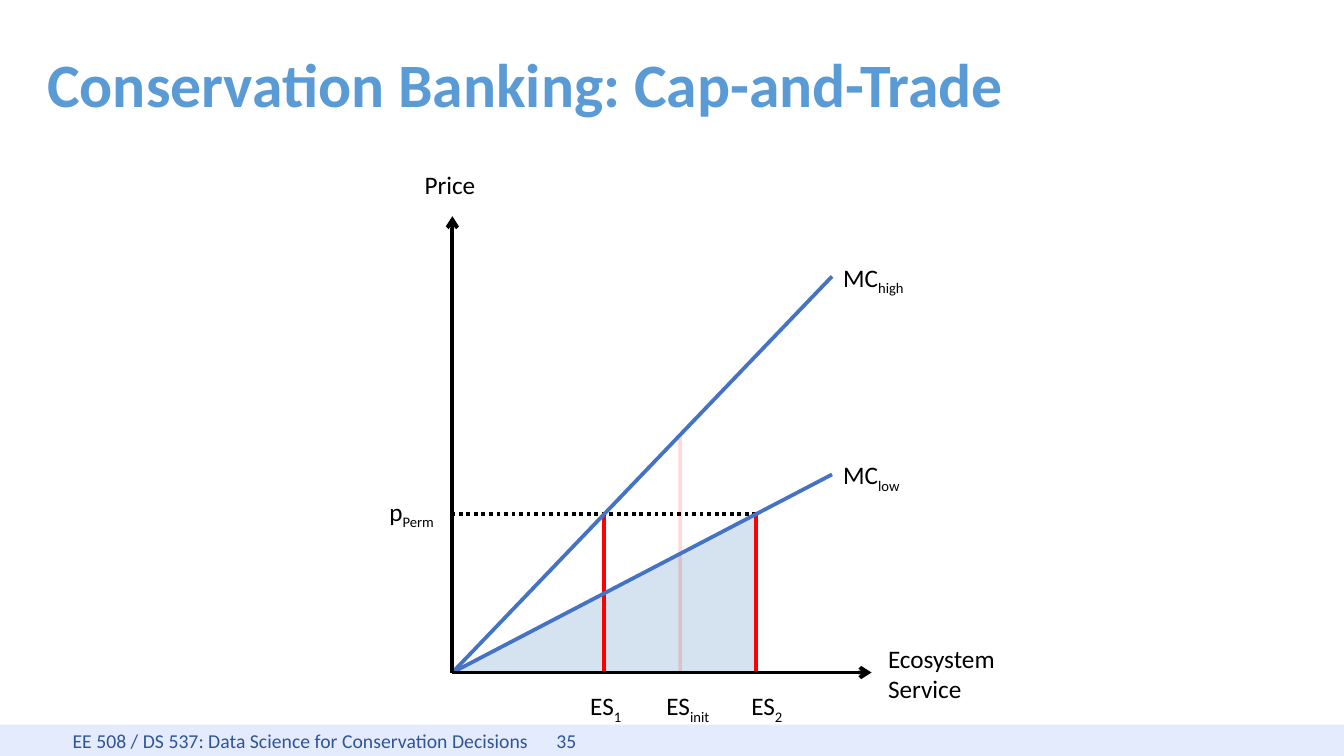
import lxml.etree
import pptx
import pptx.dml.color
import pptx.enum.dml
import pptx.enum.shapes
import pptx.enum.text
import pptx.oxml.ns
import pptx.util

SHAPE = pptx.enum.shapes.MSO_SHAPE
ANCHOR = pptx.enum.text.MSO_ANCHOR
ALIGN = pptx.enum.text.PP_ALIGN
AUTO = pptx.enum.text.MSO_AUTO_SIZE
DOTTED = pptx.enum.dml.MSO_LINE.ROUND_DOT

BLACK, RED, BLUE = "000000", "FF0000", "4472C4"


def rgb(value):
    return pptx.dml.color.RGBColor.from_string(value)


def add_xml(parent, tag, **attributes):
    return lxml.etree.SubElement(parent, pptx.oxml.ns.qn(tag), **attributes)


class Deck:
    """Style and current slide; lengths are percentages of the slide's size."""

    font = "Calibri"
    label_size = 15
    line_width = 2.25
    inset = 0.09

    def __init__(self, width, height):
        self.prs = pptx.Presentation()
        self.prs.slide_width = pptx.util.Inches(width)
        self.prs.slide_height = pptx.util.Inches(height)
        self.slide = self.prs.slides.add_slide(self.prs.slide_layouts[5])

    def x(self, share):
        return round(self.prs.slide_width * share / 100)

    def y(self, share):
        return round(self.prs.slide_height * share / 100)

    def box(self, left, top, width, height):
        return self.x(left), self.y(top), self.x(width), self.y(height)

    def format_text(self, tf, size, color, bold=False, left=inset):
        tf.word_wrap = True
        tf.margin_left = pptx.util.Inches(left)
        tf.margin_right = pptx.util.Inches(self.inset)
        tf.margin_top = tf.margin_bottom = pptx.util.Inches(0.05)
        for p in tf.paragraphs:
            for r in p.runs:
                r.font.name, r.font.size = self.font, pptx.util.Pt(size)
                r.font.bold, r.font.color.rgb = bold, rgb(color)

    def fade(self, fill, percent):
        color = fill._xPr.find(".//" + pptx.oxml.ns.qn("a:srgbClr"))
        add_xml(color, "a:alpha", val=str(percent * 1000))

    def title(self, text, *place):
        sp = self.slide.shapes.title
        sp.left, sp.top, sp.width, sp.height = self.box(*place)
        tf = sp.text_frame
        tf.text = text
        tf.auto_size = AUTO.NONE
        tf.vertical_anchor = ANCHOR.MIDDLE
        p = tf.paragraphs[0]
        p.alignment, p.line_spacing = ALIGN.LEFT, 0.9
        self.format_text(tf, 36.7, "5B9BD5", bold=True)

    def shape(self, kind, color, *place, opacity=100):
        sp = self.slide.shapes.add_shape(kind, *self.box(*place))
        sp.shadow.inherit = False
        sp.fill.solid()
        sp.fill.fore_color.rgb = rgb(color)
        sp.line.fill.background()
        if opacity < 100:
            self.fade(sp.fill, opacity)
        return sp

    def footer(self, text, number):
        sp = self.shape(SHAPE.RECTANGLE, "E3EBFC", 0, 95.84, 100, 4.16)
        tf = sp.text_frame
        tf.text = f"{text}\t{number}"
        tf.vertical_anchor = ANCHOR.MIDDLE
        p = tf.paragraphs[0]
        p.alignment = ALIGN.LEFT
        tabs = add_xml(p._p.get_or_add_pPr(), "a:tabLst")
        add_xml(tabs, "a:tab", pos=str(pptx.util.Inches(4)), algn="l")
        self.format_text(tf, 11.7, "2F5597", left=0.6)

    def label(self, text, subscript, *place, align=ALIGN.LEFT):
        sp = self.slide.shapes.add_textbox(*self.box(*place))
        tf = sp.text_frame
        tf.text = text
        p = tf.paragraphs[0]
        p.alignment = align
        if subscript:
            r = p.add_run()
            r.text = subscript
            r.font._element.set("baseline", "-25000")
        self.format_text(tf, self.label_size, BLACK)
        tf.auto_size = AUTO.SHAPE_TO_FIT_TEXT

    def line(self, start, end, color, dash=None, opacity=100, arrow=False):
        (x1, y1), (x2, y2) = start, end
        sp = self.slide.shapes.add_connector(
            pptx.enum.shapes.MSO_CONNECTOR.STRAIGHT,
            self.x(x1), self.y(y1), self.x(x2), self.y(y2))
        sp.line.width = pptx.util.Pt(self.line_width)
        sp.line.color.rgb = rgb(color)
        if dash:
            sp.line.dash_style = dash
        if opacity < 100:
            self.fade(sp.line.fill, opacity)
        if arrow:
            add_xml(sp.line._ln, "a:headEnd", type="arrow")
        add_xml(sp._element.spPr, "a:effectLst")


# Diagram scale: one unit is ES1 across and the permit price upward
ORIGIN_X, ORIGIN_Y = 33.66, 88.96
UNIT_X, UNIT_Y = 11.3, 20.96
ES_1, ES_INIT, ES_2, ES_END = 1, 1.5, 2, 2.5
HIGH, LOW = 1, 0.5


def at(service, price):
    return ORIGIN_X + service * UNIT_X, ORIGIN_Y - price * UNIT_Y


def main():
    deck = Deck(11.11, 6.25)
    deck.footer("EE 508 / DS 537: Data Science for Conservation Decisions", 35)
    deck.title("Conservation Banking: Cap-and-Trade", 2.7, 4.64, 95.32, 13.92)

    # Service labels under the axis
    for subscript, left, width, height in (("init", 48.78, 5.13, 8.32),
                                           ("1", 43.11, 5.31, 5.6),
                                           ("2", 55.09, 4.41, 5.6)):
        deck.label("ES", subscript, left, 90.56, width, height)

    # Area under the low cost curve
    sp = deck.shape(SHAPE.RIGHT_TRIANGLE, "2E75B6", *at(0, 1),
                    ES_2 * UNIT_X, UNIT_Y, opacity=20)
    sp._element.spPr.xfrm.set("flipH", "1")

    # Service levels and permit price
    for service in (ES_1, ES_2):
        deck.line(at(service, 1), at(service, 0), RED)
    deck.line(at(ES_2, 1), at(0, 1), BLACK, dash=DOTTED)
    deck.line(at(ES_INIT, ES_INIT * HIGH), at(ES_INIT, 0), RED, opacity=15)

    # Marginal cost curves
    for slope in (HIGH, LOW):
        deck.line(at(0, 0), at(ES_END, ES_END * slope), BLUE)

    # Axes
    for tip in (at(0, 2.88), at(2.76, 0)):
        deck.line(tip, at(0, 0), BLACK, arrow=True)

    # Axis, price and curve labels
    deck.label("Price", "", 30.33, 21.6, 6.3, 5.6, align=ALIGN.CENTER)
    deck.label("p", "Perm", 28.17, 64.8, 6.3, 5.6)
    deck.label("MC", "high", 61.93, 33.92, 8.73, 5.6)
    deck.label("MC", "low", 61.93, 60, 6.3, 5.6)
    deck.label("Ecosystem Service", "", 65.26, 84.32, 10.62, 9.76)

    deck.prs.save("out.pptx")


if __name__ == "__main__":
    main()
